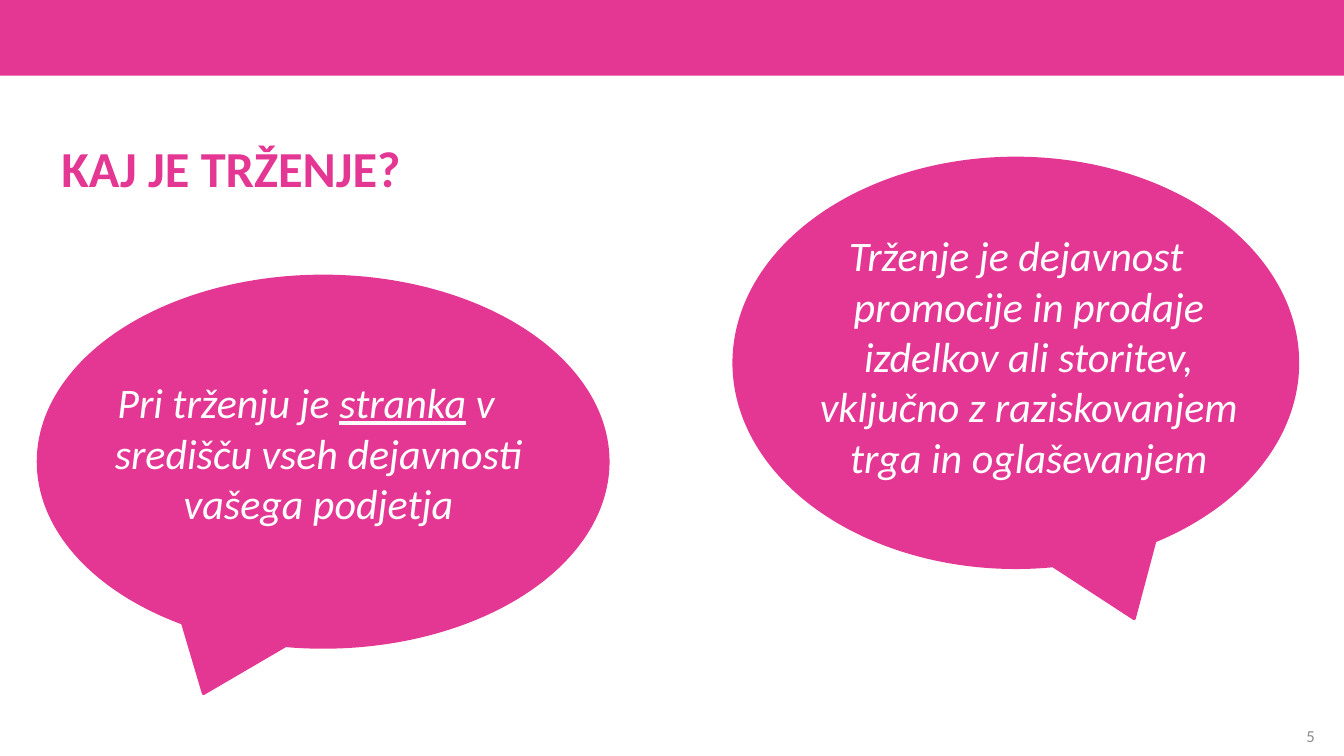
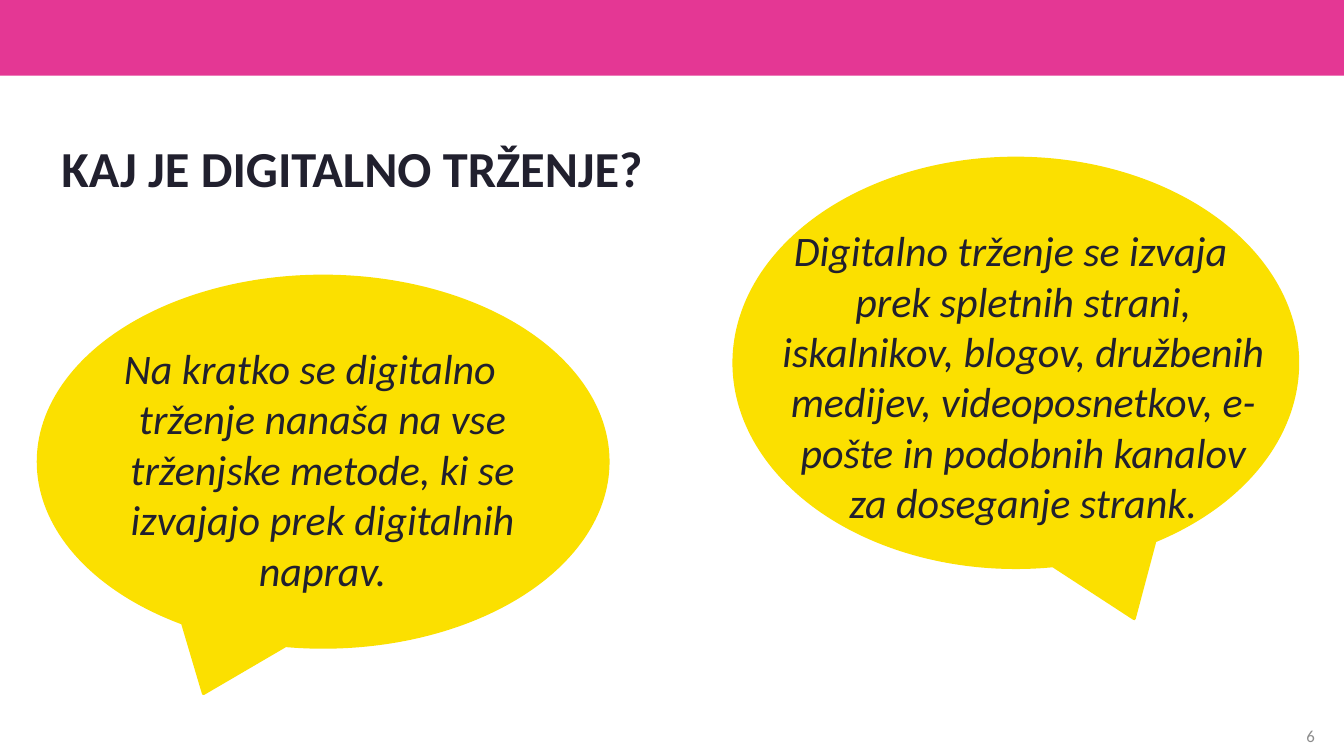
from pptx import Presentation
from pptx.dml.color import RGBColor
from pptx.enum.shapes import MSO_SHAPE
from pptx.enum.text import MSO_ANCHOR, PP_ALIGN
from pptx.util import Inches, Pt


class Deck:
    FONT = "Calibri"
    COLORS = {
        "pink": "E43794",
        "yellow": "FBE000",
        "dark": "21202E",
        "white": "FFFFFF",
        "gray": "8C8C8C",
    }

    def __init__(self):
        self.prs = Presentation()
        self.prs.slide_width = Inches(13.33)
        self.prs.slide_height = Inches(7.5)
        self.s = None

    def color(self, name):
        return RGBColor.from_string(self.COLORS[name])

    def shape(self, kind, box, color):
        sp = self.s.shapes.add_shape(kind, *map(Inches, box))
        sp.shadow.inherit = False
        sp.fill.solid()
        sp.fill.fore_color.rgb = self.color(color)
        sp.line.fill.background()
        return sp

    def text(self, box, runs, size, color, align=PP_ALIGN.LEFT, anchor=MSO_ANCHOR.TOP):
        tf = self.s.shapes.add_textbox(*map(Inches, box)).text_frame
        tf.word_wrap = True
        tf.vertical_anchor = anchor
        p = tf.paragraphs[0]
        p.alignment = align
        p.font.name = self.FONT
        p.font.size = Pt(size)
        p.font.color.rgb = self.color(color)
        for content, underlined in runs:
            r = p.add_run()
            r.text = content
            if underlined:
                r.font.underline = True
        return p

    def slide(self, number):
        self.s = self.prs.slides.add_slide(self.prs.slide_layouts[6])
        self.shape(MSO_SHAPE.RECTANGLE, (0, 0, 13.33, 0.75), "pink")
        self.text((8.44, 7.17, 4.7, 0.25), [(str(number), False)], 12, "gray",
                  PP_ALIGN.RIGHT, MSO_ANCHOR.MIDDLE)

    def title(self, content, color):
        p = self.text((0.51, 1.38, 12.31, 0.69), [(content, False)], 36, color)
        p.line_spacing = 0.9
        p.font.bold = True

    def bubble(self, box, tail, fill):
        sp = self.shape(MSO_SHAPE.OVAL_CALLOUT, box, fill)
        sp.adjustments[0] = tail
        sp.adjustments[1] = 0.625
        sp.line.color.rgb = self.color(fill)
        sp.line.width = Pt(2.25)

    def quote(self, box, runs, color):
        p = self.text(box, runs, 30, color, PP_ALIGN.CENTER)
        p.font.italic = True
        pPr = p._p.get_or_add_pPr()
        pPr.set("marL", str(Inches(0.25)))
        pPr.set("indent", str(-Inches(0.25)))


BUBBLES = [
    ((0.38, 2.74, 5.65, 3.68), -0.21),
    ((7.28, 1.57, 5.59, 4.06), 0.21),
]

SLIDES = [
    (5, "KAJ JE TRŽENJE?", "pink", "pink", "white", [
        ((0.62, 3.69, 4.83, 2.63), [
            ("Pri trženju je ", False),
            ("stranka", True),
            (" v središču vseh dejavnosti vašega podjetja", False),
        ]),
        ((7.53, 2.23, 5.1, 3.25), [
            ("Trženje je dejavnost promocije in prodaje izdelkov ali storitev, "
             "vključno z raziskovanjem trga in oglaševanjem", False),
        ]),
    ]),
    (6, "KAJ JE DIGITALNO TRŽENJE?", "dark", "yellow", "dark", [
        ((0.66, 3.35, 4.83, 2.63), [
            ("Na kratko se digitalno trženje nanaša na vse trženjske metode, "
             "ki se izvajajo prek digitalnih naprav.", False),
        ]),
        ((7.39, 2.18, 5.27, 3.25), [
            ("Digitalno trženje se izvaja prek spletnih strani, iskalnikov, blogov, "
             "družbenih medijev, videoposnetkov, e-pošte in podobnih kanalov "
             "za doseganje strank.", False),
        ]),
    ]),
]


def main():
    deck = Deck()
    for number, title, title_color, fill, text_color, quotes in SLIDES:
        deck.slide(number)
        deck.title(title, title_color)
        for (bubble_box, tail), (text_box, runs) in zip(BUBBLES, quotes):
            deck.bubble(bubble_box, tail, fill)
            deck.quote(text_box, runs, text_color)
    deck.prs.save("out.pptx")


if __name__ == "__main__":
    main()
